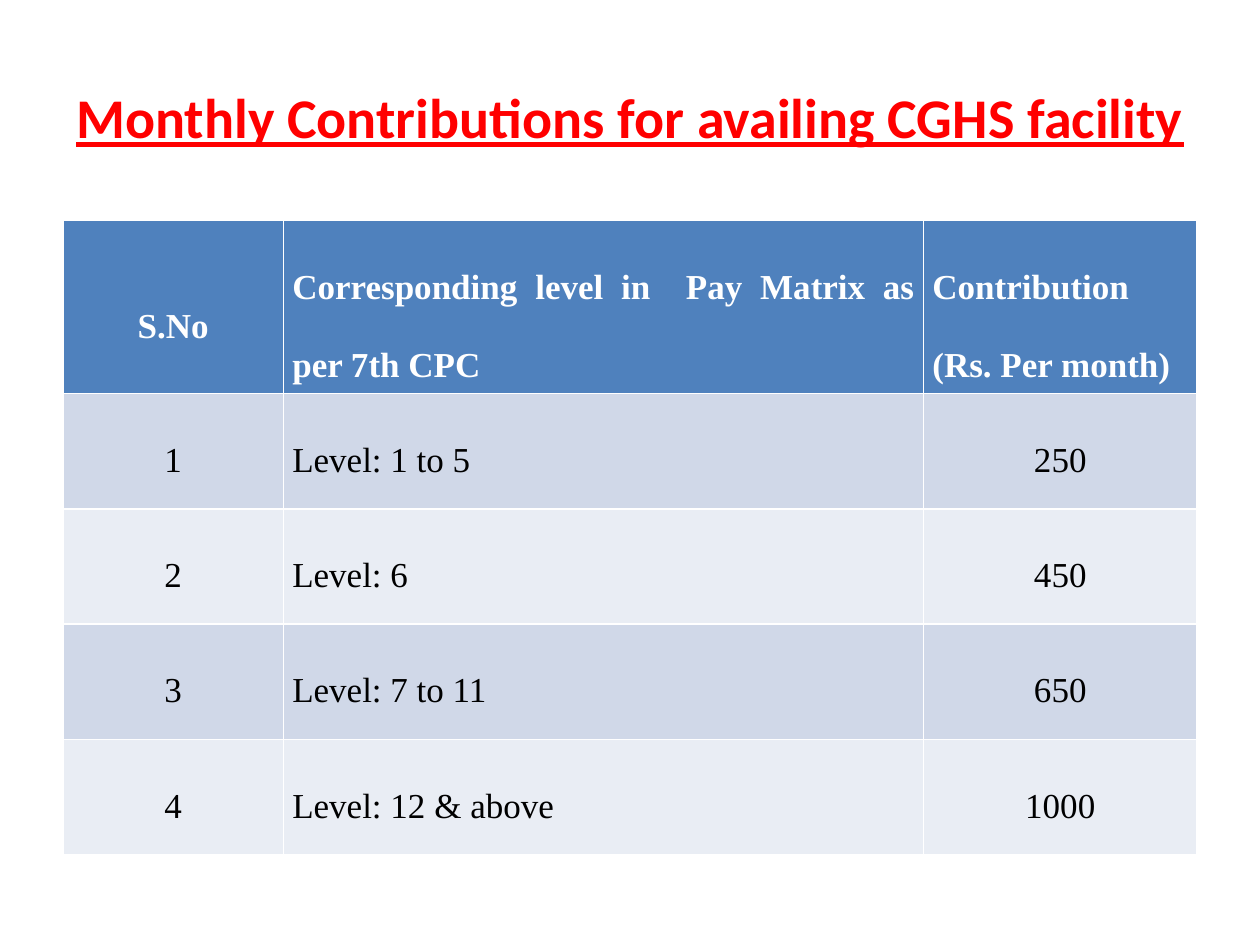
import pptx
import pptx.util
import pptx.dml.color
import pptx.enum.text

Inches, Pt = pptx.util.Inches, pptx.util.Pt
RGB = pptx.dml.color.RGBColor
Align = pptx.enum.text.PP_ALIGN
Anchor = pptx.enum.text.MSO_ANCHOR

RED = RGB(0xFF, 0x00, 0x00)
WHITE = RGB(0xFF, 0xFF, 0xFF)
BLACK = RGB(0x00, 0x00, 0x00)
BLUE = RGB(0x4F, 0x81, 0xBD)
BANDS = RGB(0xD0, 0xD8, 0xE8), RGB(0xE9, 0xED, 0xF4)

WIDTH, HEIGHT = Inches(10), Inches(7.5)
HEAD = ["S.No", "Corresponding level in  Pay Matrix as per 7th CPC",
        "Contribution (Rs. Per month)"]
RATES = [("Level: 1 to 5", 250), ("Level: 6", 450),
         ("Level: 7 to 11", 650), ("Level: 12 & above", 1000)]


class Deck:
    """Holds the style and the current slide; lengths are shares of its size."""
    title_font, table_font = "Calibri", "Times New Roman"
    inset = Inches(0.07)

    def __init__(self):
        self.file = pptx.Presentation()
        self.file.slide_width, self.file.slide_height = WIDTH, HEIGHT
        self.slide = self.file.slides.add_slide(self.file.slide_layouts[5])

    def box(self, x, y, w, h):
        return int(x * WIDTH), int(y * HEIGHT), int(w * WIDTH), int(h * HEIGHT)

    def style(self, para, name, size, color, bold):
        font = para.font
        font.name, font.size, font.bold = name, Pt(size), bold
        font.color.rgb = color

    def title(self, text, *area):
        shape = self.slide.shapes.title
        shape.left, shape.top, shape.width, shape.height = self.box(*area)
        frame = shape.text_frame
        frame.text = text
        frame.vertical_anchor = Anchor.MIDDLE
        para = frame.paragraphs[0]
        para.alignment = Align.CENTER
        self.style(para, self.title_font, 32, RED, True)
        para.font.underline = True

    def cell(self, cell, text, fill, align, head):
        cell.text = text
        cell.fill.solid()
        cell.fill.fore_color.rgb = fill
        cell.margin_left = cell.margin_right = self.inset
        cell.margin_top = cell.margin_bottom = self.inset
        cell.vertical_anchor = Anchor.MIDDLE if head else Anchor.TOP
        para = cell.text_frame.paragraphs[0]
        para.alignment = align
        para.line_spacing = 2.0
        para.space_after = Pt(12)
        self.style(para, self.table_font, 20, WHITE if head else BLACK, head)

    def table(self, rows, widths, aligns, *area):
        """Draw rows under a header, with column widths as shares of the slide."""
        grid = self.slide.shapes.add_table(
            len(rows), len(widths), *self.box(*area)).table
        for col, width in zip(grid.columns, widths):
            col.width = int(width * WIDTH)
        for r, row in enumerate(rows):
            head = r == 0
            fill = BLUE if head else BANDS[(r - 1) % 2]
            for c, text in enumerate(row):
                align = Align.JUSTIFY if head and c else aligns[c]
                self.cell(grid.cell(r, c), text, fill, align, head)


def main():
    deck = Deck()
    deck.title("Monthly Contributions for availing CGHS facility",
               0.05, 0.04, 0.9, 1 / 6)
    body = [(str(n), level, str(rate))
            for n, (level, rate) in enumerate(RATES, 1)]
    deck.table([HEAD] + body, (0.175, 0.508, 0.217),
               (Align.CENTER, Align.JUSTIFY, Align.CENTER),
               0.05, 7 / 30, 0.9, 0.61)
    deck.file.save("out.pptx")


if __name__ == "__main__":
    main()
